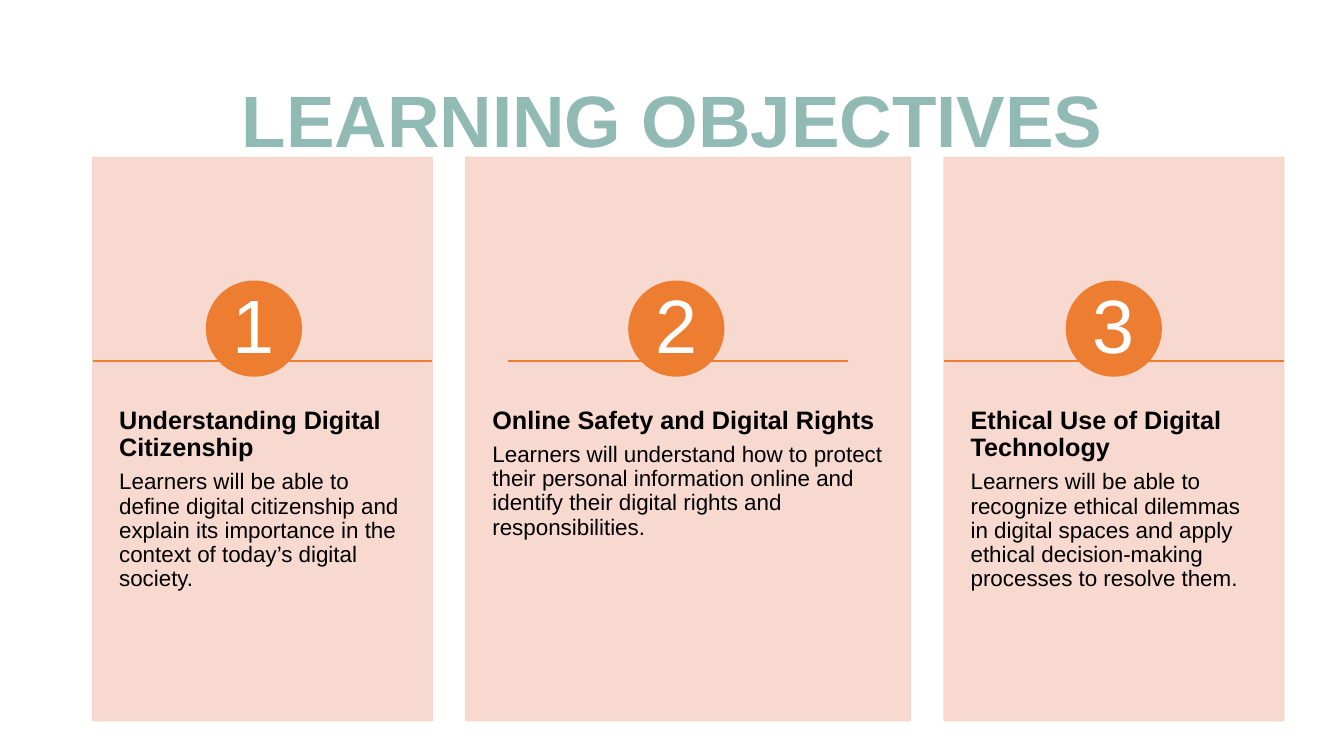
import pptx
import pptx.util
import pptx.dml.color
import pptx.oxml
import pptx.oxml.ns
import pptx.enum.shapes
import pptx.enum.text
from pptx.util import Pt

FONT = "Arial"
TEAL, PINK, ORANGE, BLACK, WHITE = "92BAB5", "F7D5CB", "ED7D31", "000000", "FFFFFF"
LEFT = pptx.enum.text.PP_ALIGN.LEFT
CENTER = pptx.enum.text.PP_ALIGN.CENTER
TOP = pptx.enum.text.MSO_ANCHOR.TOP
MIDDLE = pptx.enum.text.MSO_ANCHOR.MIDDLE
SHAPE = pptx.enum.shapes.MSO_SHAPE

CARD_LEFT, CARD_TOP, CARD_HEIGHT, GAP = 66.24, 112.3, 402.5, 24
RULE_TOP, RULE_WIDTH = 257.8, 242.6
CIRCLE_TOP, CIRCLE_SIZE, NUMBER_SIZE = 200.9, 67.7, 48.2

# Card width, circle centre, rule left, heading, body
OBJECTIVES = [
    (242.6, 181.4, 66.24, "Understanding Digital Citizenship",
     "Learners will be able to define digital citizenship and explain its "
     "importance in the context of today’s digital society."),
    (317.6, 483.1, 362.9, "Online Safety and Digital Rights",
     "Learners will understand how to protect their personal information "
     "online and identify their digital rights and responsibilities."),
    (242.6, 795.6, 674.6, "Ethical Use of Digital Technology",
     "Learners will be able to recognize ethical dilemmas in digital spaces "
     "and apply ethical decision-making processes to resolve them."),
]


def rgb(color):
    return pptx.dml.color.RGBColor.from_string(color)


def set_alpha(fill, percent):
    for clr in fill.iter(pptx.oxml.ns.qn("a:srgbClr")):
        alpha = pptx.oxml.parse_xml(
            f'<a:alpha {pptx.oxml.ns.nsdecls("a")} val="{percent * 1000}"/>')
        clr.append(alpha)


def add_block(slide, kind, x, y, w, h, color, opacity=100):
    sp = slide.shapes.add_shape(kind, Pt(x), Pt(y), Pt(w), Pt(h))
    sp.shadow.inherit = False
    sp.fill.solid()
    sp.fill.fore_color.rgb = rgb(color)
    sp.line.color.rgb = rgb(color)
    sp.line.width = Pt(1)
    if opacity < 100:
        set_alpha(sp._element.spPr, opacity)


def add_rule(slide, x, y, w, color):
    cxn = slide.shapes.add_connector(
        pptx.enum.shapes.MSO_CONNECTOR.STRAIGHT, Pt(x), Pt(y), Pt(x + w), Pt(y))
    cxn.line.color.rgb = rgb(color)
    cxn.line.width = Pt(1)
    cxn._element.spPr.append(pptx.oxml.parse_xml(
        f'<a:effectLst {pptx.oxml.ns.nsdecls("a")}/>'))


def add_text(slide, x, y, w, h, paragraphs, color, inset, align=LEFT, anchor=TOP):
    """Each paragraph is (text, size, bold, space before)."""
    tf = slide.shapes.add_textbox(Pt(x), Pt(y), Pt(w), Pt(h)).text_frame
    tf.word_wrap = True
    tf.vertical_anchor = anchor
    tf.margin_left = tf.margin_right = Pt(inset[0])
    tf.margin_top = tf.margin_bottom = Pt(inset[1])
    for i, (text, size, bold, before) in enumerate(paragraphs):
        p = tf.paragraphs[0] if i == 0 else tf.add_paragraph()
        p.text = text
        p.alignment = align
        p.line_spacing = 0.9
        p.space_before = Pt(before)
        font = p.runs[0].font
        font.name, font.size, font.bold = FONT, Pt(size), bold
        font.color.rgb = rgb(color)


def add_objective(slide, number, x, w, center, rule_left, heading, body):
    # Card and its text
    add_block(slide, SHAPE.RECTANGLE, x, CARD_TOP, w, CARD_HEIGHT, PINK, 90)
    add_text(slide, x, 265, w, 241.2,
             [(heading, 18, True, 0), (body, 16, False, 6.3)], BLACK, (18.9, 25.9))
    # Numbered circle
    add_block(slide, SHAPE.OVAL, center - CIRCLE_SIZE / 2, CIRCLE_TOP,
              CIRCLE_SIZE, CIRCLE_SIZE, ORANGE)
    add_text(slide, center - NUMBER_SIZE / 2,
             CIRCLE_TOP + (CIRCLE_SIZE - NUMBER_SIZE) / 2, NUMBER_SIZE, NUMBER_SIZE,
             [(str(number), 54, False, 0)], WHITE, (5, 0.7), CENTER, MIDDLE)
    # Rule
    add_rule(slide, rule_left, RULE_TOP, RULE_WIDTH, ORANGE)


def main():
    prs = pptx.Presentation()
    prs.slide_width, prs.slide_height = Pt(960), Pt(540)
    slide = prs.slides.add_slide(prs.slide_layouts[6])

    # Title
    add_text(slide, CARD_LEFT, 43.9, 828, 89.3,
             [("LEARNING OBJECTIVES", 52, True, 0)], TEAL, (7.2, 3.6), CENTER, MIDDLE)

    # Cards from left to right
    x = CARD_LEFT
    for number, (w, *details) in enumerate(OBJECTIVES, start=1):
        add_objective(slide, number, x, w, *details)
        x += w + GAP

    prs.save("out.pptx")


if __name__ == "__main__":
    main()
